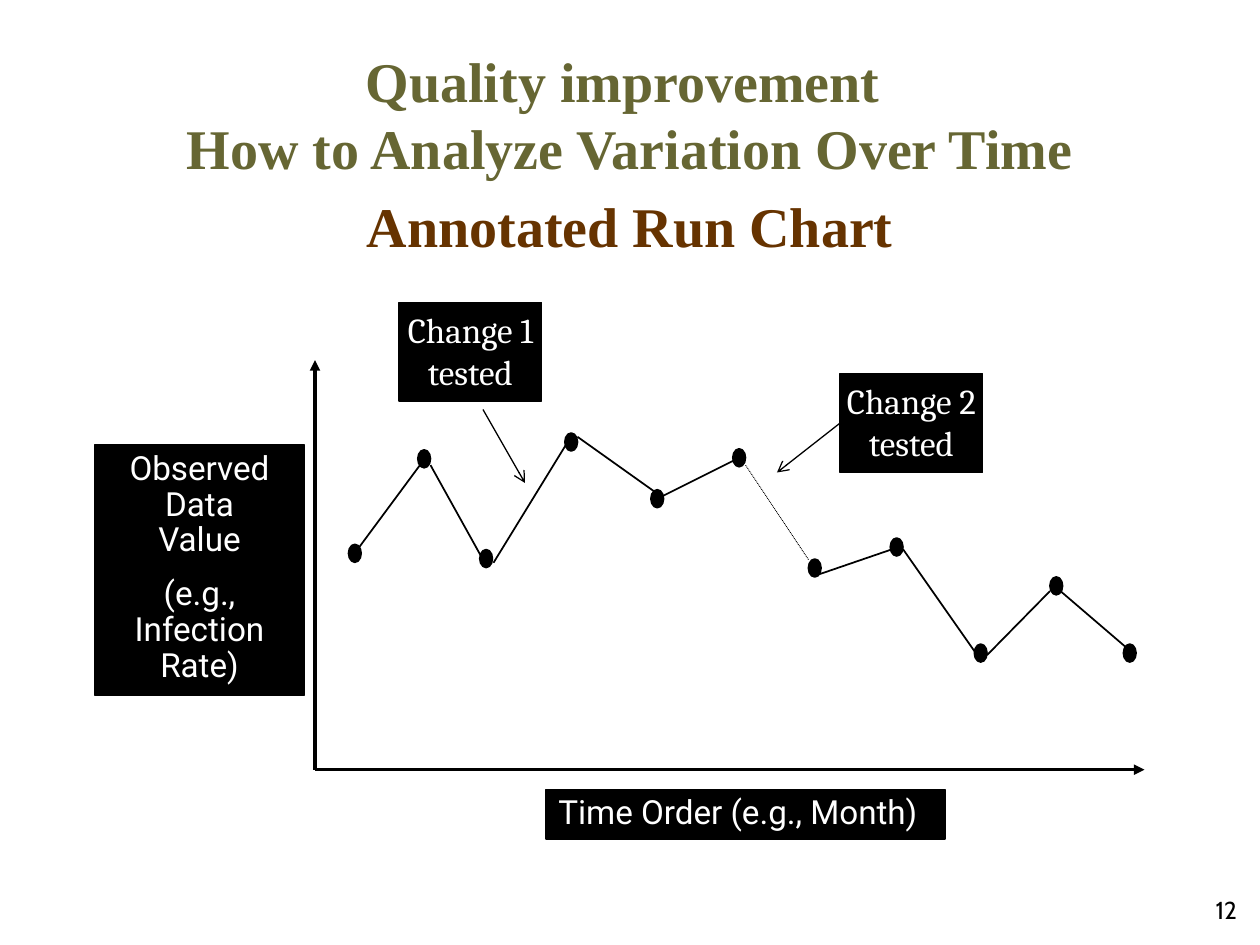
from lxml.etree import SubElement
from pptx import Presentation
from pptx.dml.color import RGBColor
from pptx.enum.dml import MSO_LINE
from pptx.enum.shapes import MSO_CONNECTOR, MSO_SHAPE
from pptx.enum.text import MSO_ANCHOR, MSO_AUTO_SIZE, PP_ALIGN
from pptx.oxml.ns import qn
from pptx.util import Inches, Pt

COLORS = {"olive": "666633", "brown": "663300", "black": "000000", "white": "FFFFFF"}
GRID_COLUMNS = 120

TITLE = "Quality improvement \vHow to Analyze Variation Over Time"
SUBTITLE = "Annotated Run Chart"
SLIDE_NUMBER = "12"
VALUE_LABEL = ["Observed", "Data", "Value", "(e.g., Infection Rate)"]
TIME_LABEL = ["Time Order (e.g., Month)"]
CHANGES = [
    (["Change 1", "tested"], (38, 28.8)),
    (["Change 2", "tested"], (80, 35.6)),
]
CHANGE_SIZE = (13.6, 9.4)

ORIGIN = (30, 73.3)
AXIS_ENDS = [(109, 73.3), (30, 34.3)]
MARKER_SIZE = (1.2, 1.7)
MARKERS = [
    (33.8, 52.7), (40.4, 43.7), (46.3, 53.2), (54.4, 42.1), (62.6, 47.5), (70.4, 43.6),
    (77.6, 54.1), (85.4, 52.1), (93.4, 62.2), (100.6, 55.8), (107.6, 62.2),
]
SEGMENTS = [
    ((34, 52.4), (40, 44.3)), ((41, 44.3), (46, 53.3)), ((47, 53.6), (54, 42.2)),
    ((55, 41.6), (63, 47.3)), ((63, 47.3), (71, 43.3)), ((78, 54.7), (85, 52.3)),
    ((86, 52.3), (93, 62.3)), ((94, 62.4), (100, 56.3)), ((101, 56.3), (108, 62.3)),
]
DOTTED_SEGMENT = ((77, 53.3), (71, 44.3))

presentation = Presentation()
presentation.slide_width = Inches(10)
presentation.slide_height = Inches(7.5)
slide = presentation.slides.add_slide(presentation.slide_layouts[1])


def grid(*cells):
    return [round(cell * presentation.slide_width / GRID_COLUMNS) for cell in cells]


def color(name):
    return RGBColor.from_string(COLORS[name])


def place(shape, *cells):
    shape.left, shape.top, shape.width, shape.height = grid(*cells)


def write(shape, lines, font="Roboto", size=19, fill="white", bold=False, align=PP_ALIGN.CENTER,
          anchor=MSO_ANCHOR.TOP, spacing=1.0, wrap=True, bullet=True):
    frame = shape.text_frame
    frame.word_wrap = wrap
    frame.auto_size = MSO_AUTO_SIZE.NONE
    frame.vertical_anchor = anchor
    for index, line in enumerate(lines):
        paragraph = frame.paragraphs[0] if index == 0 else frame.add_paragraph()
        paragraph.text = line
        paragraph.alignment = align
        paragraph.line_spacing = spacing
        paragraph.space_before = Pt(0)
        if not bullet:
            properties = paragraph._p.get_or_add_pPr()
            properties.set("marL", "0")
            properties.set("indent", "0")
            SubElement(properties, qn("a:buNone"))
        for run in paragraph.runs:
            run.font.name = font
            run.font.size = Pt(size)
            run.font.bold = bold
            run.font.color.rgb = color(fill)
    return frame


def add_black_shape(kind, *cells, line_width=1):
    shape = slide.shapes.add_shape(kind, *grid(*cells))
    shape.shadow.inherit = False
    shape.fill.solid()
    shape.fill.fore_color.rgb = color("black")
    shape.line.color.rgb = color("black")
    shape.line.width = Pt(line_width)
    return shape


def add_line(start, end, width=1, arrow=None, dash=None):
    connector = slide.shapes.add_connector(MSO_CONNECTOR.STRAIGHT, *grid(*start, *end))
    connector.line.color.rgb = color("black")
    connector.line.width = Pt(width)
    if dash:
        connector.line.dash_style = dash
    if arrow:
        SubElement(connector.line._get_or_add_ln(), qn("a:tailEnd"), type=arrow)
    SubElement(connector._element.spPr, qn("a:effectLst"))
    return connector


title = slide.shapes.title
place(title, 6, 4.6, 108, 12.4)
write(title, [TITLE], "Times New Roman", 32, "olive", bold=True, anchor=MSO_ANCHOR.MIDDLE)

body = slide.placeholders[1]
place(body, 6, 17, 108, 65)
body_frame = write(body, [SUBTITLE], "Times New Roman", 32, "brown", bold=True, bullet=False)
body_frame.margin_top = Inches(0.1)

for axis_end in AXIS_ENDS:
    add_line(ORIGIN, axis_end, width=2, arrow="triangle")

time_box = add_black_shape(MSO_SHAPE.RECTANGLE, 52, 75.2, 38, 4.7)
write(time_box, TIME_LABEL, align=PP_ALIGN.LEFT, spacing=0.9)
value_box = add_black_shape(MSO_SHAPE.RECTANGLE, 9, 42.4, 20, 23.8)
value_frame = write(value_box, VALUE_LABEL, spacing=0.9)
value_frame.paragraphs[-1].space_before = Pt(10)

for start, end in SEGMENTS:
    add_line(start, end)
add_line(*DOTTED_SEGMENT, width=0.5, dash=MSO_LINE.ROUND_DOT)

marker_width, marker_height = MARKER_SIZE
for center_x, center_y in MARKERS:
    add_black_shape(MSO_SHAPE.OVAL, center_x - marker_width / 2, center_y - marker_height / 2,
                    marker_width, marker_height)

change_boxes = []
for lines, corner in CHANGES:
    box = add_black_shape(MSO_SHAPE.RECTANGLE, *corner, *CHANGE_SIZE, line_width=0.75)
    write(box, lines, "Cambria", 20, wrap=False)
    change_boxes.append(box)

add_line((46, 39), (50, 46), width=0.75, arrow="arrow")
second_arrow = add_line((80, 41), (74, 45), width=0.75, arrow="arrow")
second_arrow.begin_connect(change_boxes[1], 1)

number_box = slide.shapes.add_textbox(*grid(91, 84.7, 28, 6.2))
write(number_box, [SLIDE_NUMBER], "Cabin", 14, "black", align=PP_ALIGN.RIGHT)

presentation.save("out.pptx")
